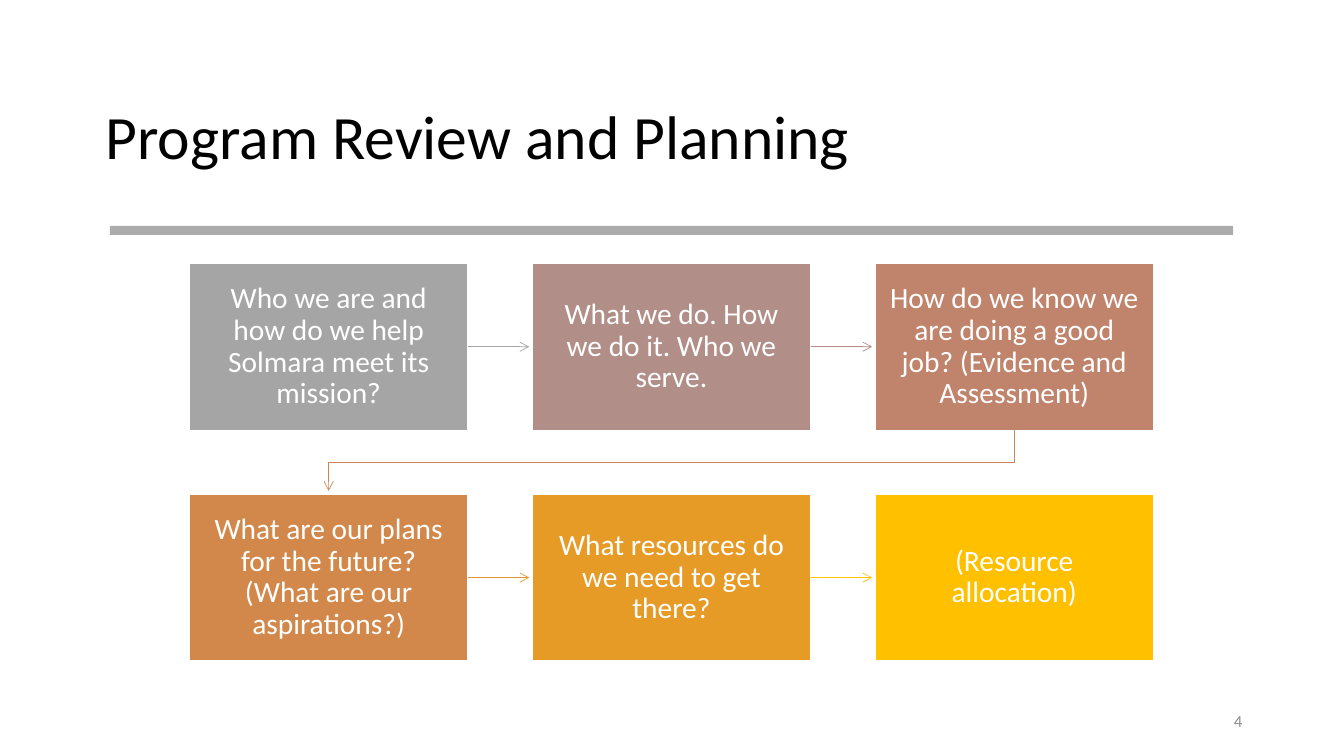
from lxml.etree import SubElement
from pptx import Presentation
from pptx.dml.color import RGBColor
from pptx.enum.shapes import MSO_CONNECTOR, MSO_SHAPE
from pptx.enum.text import MSO_ANCHOR, PP_ALIGN
from pptx.oxml.ns import qn
from pptx.util import Inches, Pt

TITLE = "Program Review and Planning"
PAGE_NUMBER = "4"
STEPS = [
    ("Who we are and how do we help Solmara meet its mission?", "step1", "arrow1"),
    ("What we do. How we do it. Who we serve.", "step2", "arrow2"),
    ("How do we know we are doing a good job? (Evidence and Assessment)", "step3", "arrow3"),
    ("What are our plans for the future? (What are our aspirations?)", "step4", "arrow4"),
    ("What resources do we need to get there?", "step5", "arrow5"),
    ("(Resource allocation)", "step6", None),
]
COLORS = {
    "black": "000000", "white": "FFFFFF", "rule": "808080", "number": "8C8C8C",
    "step1": "A5A5A5", "step2": "B18F88", "step3": "C0836C",
    "step4": "D2884B", "step5": "E79B27", "step6": "FFC000",
    "arrow1": "A5A5A5", "arrow2": "B48C83", "arrow3": "C9865C",
    "arrow4": "E19530", "arrow5": "FFC000",
}
FONT = "Calibri"
COLUMNS = 3
LEFT, TOP = 1.88, 2.61
WIDTH, HEIGHT = 2.76, 1.66
PITCH_X, PITCH_Y = 3.4, 2.29
ARROW_GAP = 0.03
INSET = 0.14


def color(name):
    return RGBColor.from_string(COLORS[name])


def write(shape, text, size, color_name, align, spacing=1.0):
    frame = shape.text_frame
    frame.word_wrap = True
    frame.vertical_anchor = MSO_ANCHOR.MIDDLE
    para = frame.paragraphs[0]
    para.text = text
    para.alignment = align
    para.line_spacing = spacing
    para.font.name = FONT
    para.font.size = Pt(size)
    para.font.color.rgb = color(color_name)
    return frame


def add_text(page, place, *style):
    box = page.shapes.add_textbox(*map(Inches, place))
    write(box, *style)


def add_rule(page):
    rule = page.shapes.add_shape(MSO_SHAPE.RECTANGLE, *map(Inches, (1.09, 2.24, 11.14, 0.09)))
    rule.shadow.inherit = False
    rule.fill.solid()
    rule.fill.fore_color.rgb = color("rule")
    rule.line.fill.background()
    fill = rule.fill._xPr.find(qn("a:solidFill"))
    SubElement(fill[0], qn("a:alpha"), val="65000")


def add_step(page, left, top, text, fill):
    box = page.shapes.add_shape(MSO_SHAPE.RECTANGLE, *map(Inches, (left, top, WIDTH, HEIGHT)))
    box.shadow.inherit = False
    box.fill.solid()
    box.fill.fore_color.rgb = color(fill)
    box.line.color.rgb = color("white")
    box.line.width = Pt(1)
    frame = write(box, text, 21, "white", PP_ALIGN.CENTER, 0.9)
    frame.margin_left = frame.margin_right = Inches(INSET)
    frame.margin_top = frame.margin_bottom = Inches(INSET)
    return box


def style_arrow(arrow, color_name):
    arrow.line.color.rgb = color(color_name)
    arrow.line.width = Pt(0.5)
    SubElement(arrow.line._get_or_add_ln(), qn("a:tailEnd"), type="arrow")


def add_straight_arrow(page, box, left, top, color_name):
    middle = Inches(top + HEIGHT / 2)
    arrow = page.shapes.add_connector(
        MSO_CONNECTOR.STRAIGHT, Inches(left + WIDTH), middle,
        Inches(left + PITCH_X - ARROW_GAP), middle)
    arrow.begin_connect(box, 3)
    style_arrow(arrow, color_name)
    SubElement(arrow._element.spPr, qn("a:effectLst"))


def add_return_arrow(page, left, top, color_name):
    start_x, end_x = left + WIDTH / 2, LEFT + WIDTH / 2
    bottom, next_top = top + HEIGHT, top + PITCH_Y
    bend = (bottom + next_top) / 2
    builder = page.shapes.build_freeform(Inches(start_x), Inches(bottom))
    corners = [(start_x, bend), (end_x, bend), (end_x, next_top - ARROW_GAP)]
    builder.add_line_segments([(Inches(x), Inches(y)) for x, y in corners], close=False)
    arrow = builder.convert_to_shape()
    arrow.shadow.inherit = False
    arrow.fill.background()
    style_arrow(arrow, color_name)


def main():
    deck = Presentation()
    deck.slide_width, deck.slide_height = Inches(13.33), Inches(7.5)
    page = deck.slides.add_slide(deck.slide_layouts[6])
    add_text(page, (0.95, 0.66, 11.43, 1.45), TITLE, 44, "black", PP_ALIGN.LEFT, 0.9)
    add_rule(page)
    for index, (text, fill, arrow_color) in enumerate(STEPS):
        row, column = divmod(index, COLUMNS)
        left, top = LEFT + column * PITCH_X, TOP + row * PITCH_Y
        box = add_step(page, left, top, text, fill)
        if arrow_color and column < COLUMNS - 1:
            add_straight_arrow(page, box, left, top, arrow_color)
        elif arrow_color:
            add_return_arrow(page, left, top, arrow_color)
    add_text(page, (9.42, 6.95, 3, 0.4), PAGE_NUMBER, 12, "number", PP_ALIGN.RIGHT)
    deck.save("out.pptx")


if __name__ == "__main__":
    main()
